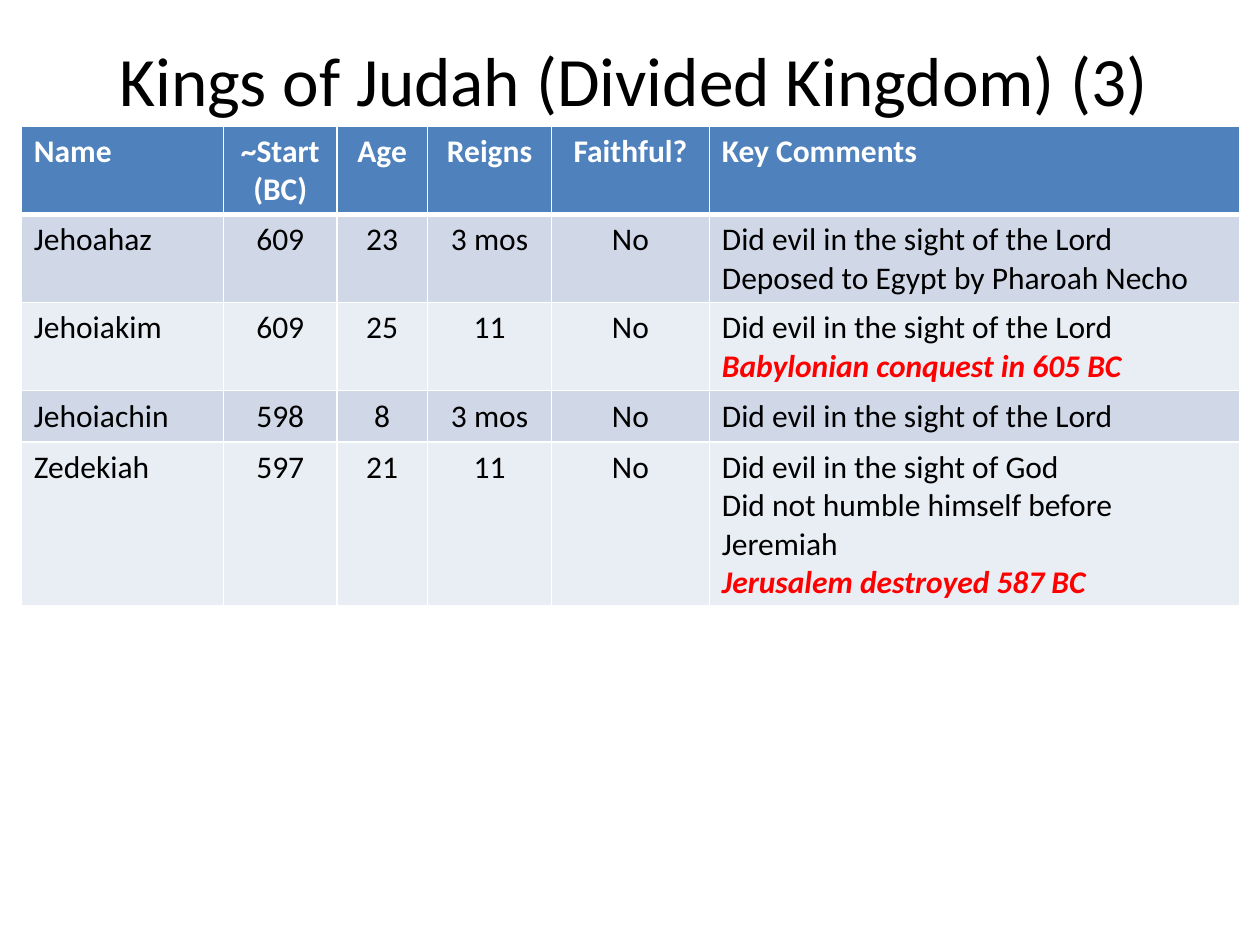
from dataclasses import dataclass

from lxml.etree import SubElement
from pptx import Presentation
from pptx.dml.color import RGBColor
from pptx.enum.text import MSO_ANCHOR, PP_ALIGN
from pptx.oxml.ns import qn
from pptx.util import Cm, Pt


@dataclass(frozen=True)
class Theme:
    font: str = "Calibri"
    title_size: float = 39.6
    body_size: float = 18
    text: str = "000000"
    header_text: str = "FFFFFF"
    highlight: str = "FF0000"
    border: str = "FFFFFF"
    header_fill: str = "4F81BD"
    band_fills: tuple = ("D0D8E8", "E9EDF4")


theme = Theme()


def add_run(p, text, size, color, bold=False, italic=False):
    r = p.add_run()
    r.text = text
    r.font.name = theme.font
    r.font.size = Pt(size)
    r.font.bold = bold
    r.font.italic = italic
    r.font.color.rgb = RGBColor.from_string(color)


def add_border(cell, side, width):
    """Draw one cell edge; side is L, R, T or B, width is in points."""
    ln = SubElement(cell._tc.get_or_add_tcPr(), qn(f"a:ln{side}"), w=str(Pt(width)))
    fill = SubElement(ln, qn("a:solidFill"))
    SubElement(fill, qn("a:srgbClr"), val=theme.border)


prs = Presentation()
prs.slide_width, prs.slide_height = Cm(25.4), Cm(19.05)
s = prs.slides.add_slide(prs.slide_layouts[6])

# Title
title = s.shapes.add_textbox(Cm(1.35), Cm(0), Cm(22.86), Cm(3.18))
tf = title.text_frame
tf.word_wrap = True
tf.vertical_anchor = MSO_ANCHOR.MIDDLE
p = tf.paragraphs[0]
p.alignment = PP_ALIGN.CENTER
add_run(p, "Kings of Judah (Divided Kingdom) (3)", theme.title_size, theme.text)

# Table of kings: each line of a cell is a paragraph
evil = "Did evil in the sight of the Lord"
kings = [
    ("Name", "~Start\n(BC)", "Age", "Reigns", "Faithful?", "Key Comments"),
    ("Jehoahaz", "609", "23", "3 mos", "No",
     f"{evil}\nDeposed to Egypt by Pharoah Necho"),
    ("Jehoiakim", "609", "25", "11", "No",
     f"{evil}\nBabylonian conquest in 605 BC"),
    ("Jehoiachin", "598", "8", "3 mos", "No", evil),
    ("Zedekiah", "597", "21", "11", "No",
     "Did evil in the sight of God\nDid not humble himself before Jeremiah\n"
     "Jerusalem destroyed 587 BC"),
]
turning_points = {"Babylonian conquest in 605 BC", "Jerusalem destroyed 587 BC"}
col_widths = [4.08, 2.28, 1.83, 2.5, 3.18, 10.69]
left_columns = {0, len(col_widths) - 1}
row_height = 1.03

table = s.shapes.add_table(
    len(kings), len(col_widths), Cm(0.43), Cm(2.54),
    Cm(sum(col_widths)), Cm(row_height * len(kings))).table
for column, width in zip(table.columns, col_widths):
    column.width = Cm(width)

for i, king in enumerate(kings):
    table.rows[i].height = Cm(row_height)
    header = i == 0
    fill = theme.header_fill if header else theme.band_fills[(i - 1) % 2]
    for j, text in enumerate(king):
        cell = table.cell(i, j)
        top, bottom = (3 if i == 1 else 1), (3 if header else 1)
        for side, width in zip("LRTB", (1, 1, top, bottom)):
            add_border(cell, side, width)
        cell.fill.solid()
        cell.fill.fore_color.rgb = RGBColor.from_string(fill)
        tf = cell.text_frame
        for k, line in enumerate(text.split("\n")):
            p = tf.add_paragraph() if k else tf.paragraphs[0]
            p.alignment = PP_ALIGN.LEFT if j in left_columns else PP_ALIGN.CENTER
            marked = line in turning_points
            color = (theme.header_text if header
                     else theme.highlight if marked else theme.text)
            add_run(p, line, theme.body_size, color, header or marked, marked)

prs.save("out.pptx")
